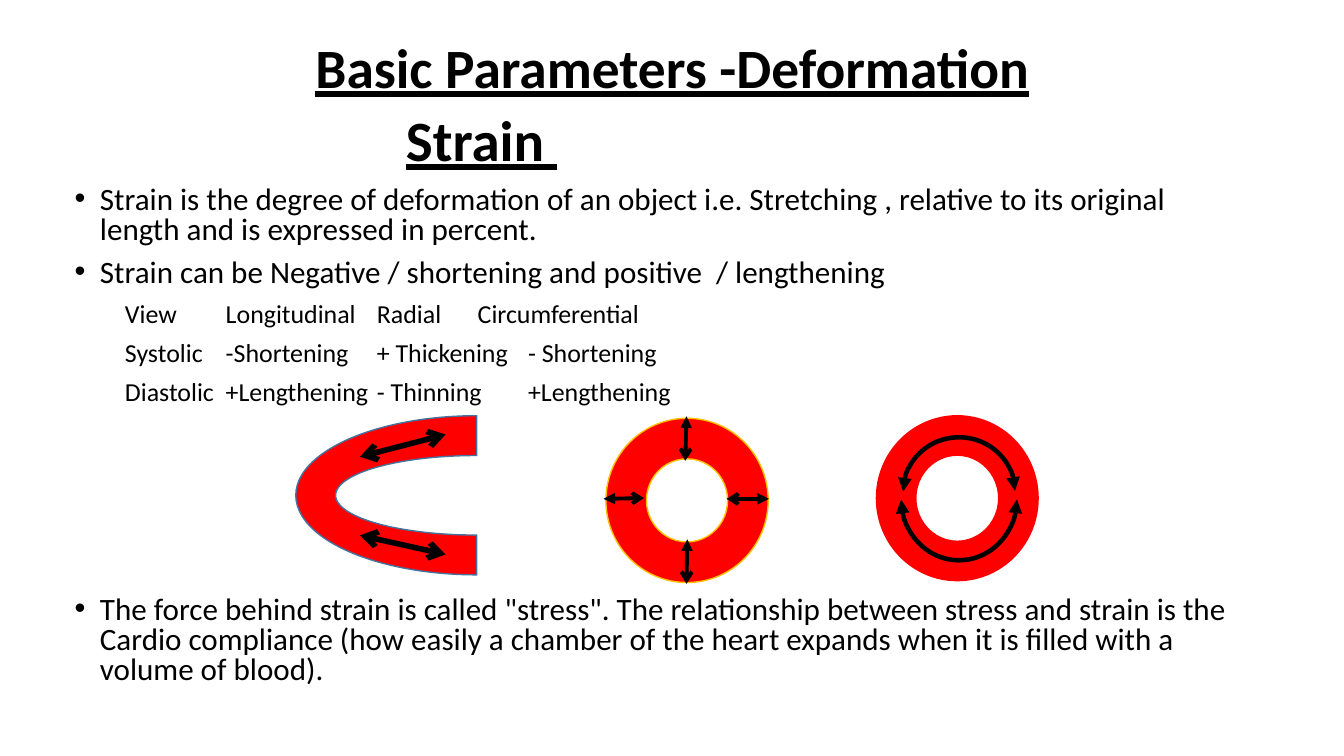
from lxml import etree
from pptx import Presentation, util as u
from pptx.dml.color import RGBColor
from pptx.enum import shapes, text
from pptx.oxml.ns import qn

# Content: lengths in cm, sizes in points
FONT, BLACK, RED = "Calibri", "000000", "FF0000"
TITLE = "Basic Parameters -Deformation"
TITLE_BOX = (2.34, 1.02, 29.21, 1.52)
BODY_BOX = (1.63, 2.84, 29.9, 15.27)
SUBTITLE, SUBTITLE_INDENT = "Strain ", 8.35
POINTS = [
    "Strain is the degree of deformation of an object i.e. Stretching , "
    "relative to its original length and is expressed in percent.",
    "Strain can be Negative / shortening and positive  / lengthening",
]
STRAIN_ROWS = [  # (word, tab position)
    [("View", 2.69), ("Longitudinal", 6.2), ("Radial", 13.31), ("Circumferential", 18.9)],
    [("Systolic", 2.54), ("-Shortening", 5.97), ("+ Thickening", 12.57), ("- Shortening", 18.69)],
    [("Diastolic", 2.54), ("+Lengthening", 5.94), ("- Thinning", 12.8), ("+Lengthening", 18.82)],
]
CLOSING = ('The force behind strain is called "stress". The relationship between stress '
           "and strain is the Cardio compliance (how easily a chamber of the heart expands "
           "when it is filled with a volume of blood).")
GAP, DIAGRAM_GAP = 10, 136

MUSCLES = [  # (preset, box, rotation, outline)
    ("BLOCK_ARC", (10.01, 7.92, 4.01, 9.12), 270, "43739E"),
    ("DONUT", (15.27, 10.54, 4.09, 4.14), 0, "FFC000"),
    ("DONUT", (22.07, 10.46, 4.11, 4.19), 0, None),
]
ARROWS = [  # (width, head, tail, lines as x1, y1, x2, y2)
    (4, "arrow", "arrow", [(11.23, 10.95, 9.07, 11.51), (11.23, 13.97, 9.07, 13.49)]),
    (2.75, "arrow", "triangle", [(17.3, 14.71, 17.32, 13.59), (17.27, 11.61, 17.3, 10.49),
                                 (16.23, 12.55, 15.21, 12.57), (18.31, 12.57, 19.38, 12.57)]),
]
ARCS = [  # (box, start and end angle)
    ((22.71, 11.02, 2.92, 3.1), (0.39, 107.54)),
    ((22.76, 11.02, 2.82, 2.74), (107.99, 215.54)),
]


def rgb(value):
    return RGBColor.from_string(value)


def cm(values):
    return [u.Cm(v) for v in values]


def add_xml(parent, tag, **attrs):
    return etree.SubElement(parent, qn(tag), attrs)


def write(p, words, size, spacing, before=0, **font):
    p.line_spacing, p.space_before = spacing, u.Pt(before)
    r = p.add_run()
    r.text = words
    r.font.color.rgb = rgb(BLACK)
    for name, value in {"name": FONT, "size": u.Pt(size), **font}.items():
        setattr(r.font, name, value)


def indent(p, left, first=0):
    p_pr = p._p.get_or_add_pPr()
    p_pr.set("marL", str(u.Cm(left)))
    p_pr.set("indent", str(u.Cm(first)))
    return p_pr


def add_point(tf, words, before=GAP):
    p = tf.add_paragraph()
    write(p, words, 22.2, 0.8, before)
    p_pr = indent(p, 0.64, -0.64)
    add_xml(p_pr, "a:buFont", typeface="Arial")
    add_xml(p_pr, "a:buChar", char="•")


def style_line(line, color, width, head=None, tail=None):
    line.color.rgb, line.width = rgb(color), u.Pt(width)
    for tag, kind in (("a:headEnd", head), ("a:tailEnd", tail)):
        if kind:
            add_xml(line._get_or_add_ln(), tag, type=kind)


prs = Presentation()
prs.slide_width, prs.slide_height = u.Cm(33.87), u.Cm(19.05)
s = prs.slides.add_slide(prs.slide_layouts[5])

# Title
title = s.shapes.title
title.left, title.top, title.width, title.height = cm(TITLE_BOX)
tf = title.text_frame
tf.vertical_anchor = text.MSO_ANCHOR.MIDDLE
p = tf.paragraphs[0]
p.alignment = text.PP_ALIGN.CENTER
write(p, TITLE, 39.6, 0.9, bold=True, underline=True)

# Body text
tf = s.shapes.add_textbox(*cm(BODY_BOX)).text_frame
tf.word_wrap = True
p = tf.paragraphs[0]
write(p, SUBTITLE, 40.7, 0.8, GAP, bold=True, underline=True)
indent(p, SUBTITLE_INDENT)
for point in POINTS:
    add_point(tf, point)
for row in STRAIN_ROWS:
    p = tf.add_paragraph()
    write(p, "".join("\t" + word for word, _ in row), 18.5, 0.8, GAP)
    tabs = add_xml(indent(p, 0), "a:tabLst")
    for _, x in row:
        add_xml(tabs, "a:tab", pos=str(u.Cm(x)), algn="l")
add_point(tf, CLOSING, DIAGRAM_GAP)

# Heart muscle shapes
for preset, box, rotation, outline in MUSCLES:
    sp = s.shapes.add_shape(getattr(shapes.MSO_SHAPE, preset), *cm(box))
    sp.shadow.inherit = False
    sp.rotation = rotation
    sp.fill.solid()
    sp.fill.fore_color.rgb = rgb(RED)
    if outline:
        style_line(sp.line, outline, 1)
    else:
        sp.line.fill.background()

# Straight arrows: longitudinal and radial
for width, head, tail, lines in ARROWS:
    for ends in lines:
        c = s.shapes.add_connector(shapes.MSO_CONNECTOR.STRAIGHT, *cm(ends))
        style_line(c.line, BLACK, width, head, tail)
        add_xml(c._element.spPr, "a:effectLst")

# Curved arrows: circumferential
for box, angles in ARCS:
    sp = s.shapes.add_shape(shapes.MSO_SHAPE.ARC, *cm(box))
    sp.shadow.inherit = False
    sp.fill.background()
    for i, angle in enumerate(angles):
        sp.adjustments[i] = angle
    style_line(sp.line, BLACK, 3.25, "triangle", "triangle")

prs.save("out.pptx")
